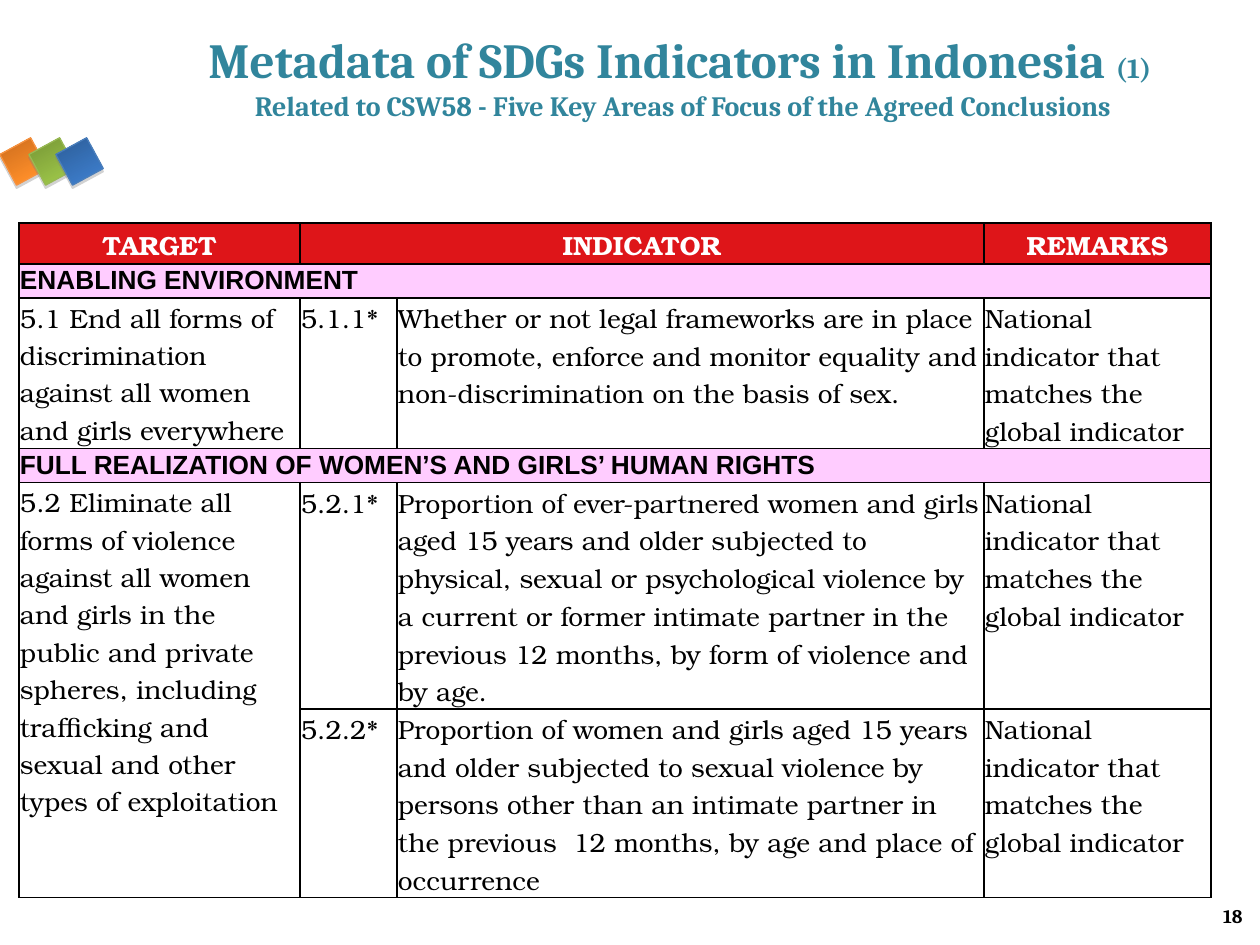
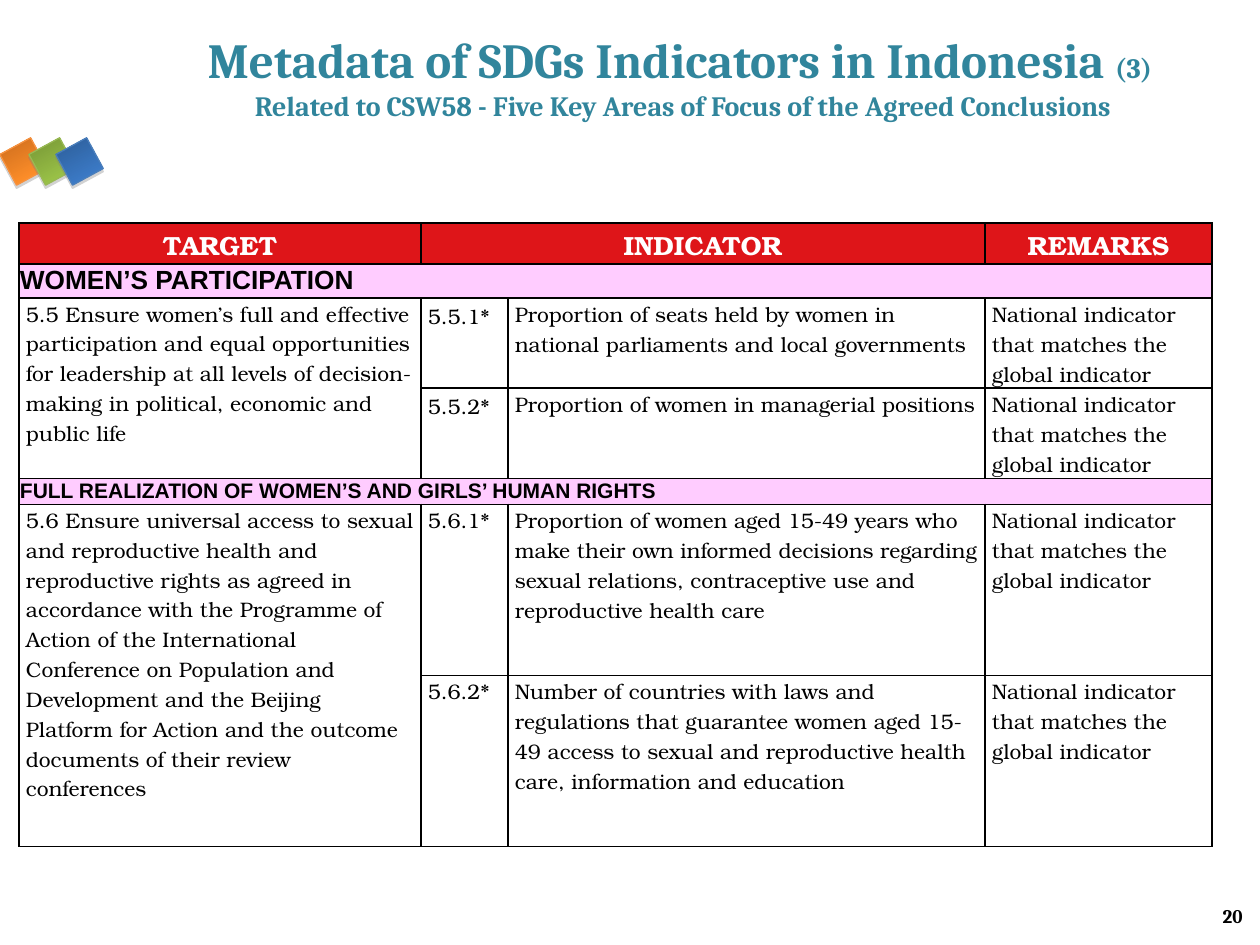
import lxml.etree
import pptx
import pptx.dml.color
import pptx.enum.shapes
import pptx.enum.text
import pptx.oxml
import pptx.oxml.ns
import pptx.util
from dataclasses import dataclass

PX = 914400 // 126
HEADING_FONT, SECTION_FONT, BODY_FONT = "Cambria", "Arial", "TeX Gyre Bonum"
TEAL, RED, PINK, BLACK, WHITE = "31859C", "DE1519", "FFCCFF", "000000", "FFFFFF"
SQUARES = [("FF8F2A", "CB6C1D", "F69240"), ("9BC348", "769535", "98B954"),
           ("3C7BC7", "2C5D98", "4A7EBB")]
REMARK = "National indicator that matches the global indicator"
RIGHTS = "FULL REALIZATION OF WOMEN’S AND GIRLS’ HUMAN RIGHTS"
HEADER_HEIGHT = 34
ALIGN = pptx.enum.text.PP_ALIGN
ANCHOR = pptx.enum.text.MSO_ANCHOR


@dataclass
class Section:
    """A pink band followed by one target and its (height, code, indicator) rows."""
    name: str
    target: str
    indicators: list
    band_height: int = 34
    band_size: int = 15
    code_spacing: float = 1.07


@dataclass
class IndicatorSlide:
    sequence: int
    number: int
    columns: list
    size: int
    inset: int
    sections: list


SLIDES = [
    IndicatorSlide(1, 18, [281, 97, 587, 227], 15, 1, [
        Section("ENABLING ENVIRONMENT",
                "5.1 End all forms of discrimination against all women and girls everywhere",
                [(134, "5.1.1*", "Whether or not legal frameworks are in place to promote, "
                  "enforce and monitor equality and non-discrimination on the basis of sex.")]),
        Section(RIGHTS,
                "5.2 Eliminate all forms of violence against all women and girls in the public "
                "and private spheres, including trafficking and sexual and other types of "
                "exploitation",
                [(171, "5.2.1*", "Proportion of ever-partnered women and girls aged 15 years and "
                  "older subjected to physical, sexual or psychological violence by a current or "
                  "former intimate partner in the previous 12 months, by form of violence and "
                  "by age."),
                 (169, "5.2.2*", "Proportion of women and girls aged 15 years and older subjected "
                  "to sexual violence by persons other than an intimate partner in the previous  "
                  "12 months, by age and place of occurrence")]),
    ]),
    IndicatorSlide(3, 20, [402, 87, 477, 227], 12, 7, [
        Section("WOMEN’S PARTICIPATION",
                "5.5 Ensure women’s full and effective participation and equal opportunities for "
                "leadership at all levels of decision-making in political, economic and public "
                "life",
                [(81, "5.5.1*", "Proportion of seats held by women in national parliaments and "
                  "local governments"),
                 (81, "5.5.2*", "Proportion of women in managerial positions")],
                code_spacing=1.15),
        Section(RIGHTS,
                "5.6 Ensure universal access to sexual and reproductive health and reproductive "
                "rights as agreed in accordance with the Programme of Action of the "
                "International Conference on Population and\n"
                "Development and the Beijing Platform for Action and the outcome documents of "
                "their review conferences",
                [(171, "5.6.1*", "Proportion of women aged 15-49 years who make their own "
                  "informed decisions regarding sexual relations, contraceptive use and "
                  "reproductive health care"),
                 (171, "5.6.2*", "Number of countries with laws and regulations that guarantee "
                  "women aged 15-49 access to sexual and reproductive health care, information "
                  "and education")],
                band_height=26, band_size=12),
    ]),
]


def px(*lengths):
    return [pptx.util.Emu(length * PX) for length in lengths]


def rgb(color):
    return pptx.dml.color.RGBColor.from_string(color)


def write(paragraph, text, size=15, font=BODY_FONT, color=BLACK, bold=False,
          align=ALIGN.LEFT, spacing=None):
    paragraph.alignment = align
    paragraph.line_spacing = spacing
    run = paragraph.add_run()
    run.text = text
    run.font.size = pptx.util.Pt(size)
    run.font.name = font
    run.font.bold = bold
    run.font.color.rgb = rgb(color)


def add_squares(slide, box):
    """Three tilted gradient squares in a row, starting at the box's left edge."""
    left, top, size = box
    for offset, (light, dark, outline) in zip((0, 29, 56), SQUARES):
        square = slide.shapes.add_shape(pptx.enum.shapes.MSO_SHAPE.RECTANGLE,
                                        *px(left + offset, top, size, size))
        square.rotation = 151.5
        square.fill.gradient()
        square.fill.gradient_angle = 270
        for stop, color, position in zip(square.fill.gradient_stops, (light, dark), (0.2, 1)):
            stop.color.rgb = rgb(color)
            stop.position = position
        square.line.color.rgb = rgb(outline)
        square.line.width = pptx.util.Pt(0.75)
        square.shadow.inherit = False
        effects = square._element.spPr.find(pptx.oxml.ns.qn("a:effectLst"))
        effects.append(pptx.oxml.parse_xml(
            f'<a:outerShdw {pptx.oxml.ns.nsdecls("a")} blurRad="0" dist="22860" dir="5400000" '
            'rotWithShape="0"><a:srgbClr val="808080"><a:alpha val="35000"/></a:srgbClr>'
            '</a:outerShdw>'))


def add_title(slide, box, sequence):
    title = slide.shapes.title
    title.left, title.top, title.width, title.height = px(*box)
    frame = title.text_frame
    frame.auto_size = pptx.enum.text.MSO_AUTO_SIZE.NONE
    frame.vertical_anchor = ANCHOR.MIDDLE
    style = dict(font=HEADING_FONT, color=TEAL, bold=True, align=ALIGN.CENTER)
    write(frame.paragraphs[0], "Metadata of SDGs Indicators in Indonesia ", size=28, **style)
    write(frame.paragraphs[0], f"({sequence}) ", size=16, **style)
    write(frame.add_paragraph(),
          "Related to CSW58 - Five Key Areas of Focus of the Agreed Conclusions",
          size=16, **style)


def add_slide_number(slide, box, number):
    frame = slide.shapes.add_textbox(*px(*box)).text_frame
    frame.word_wrap = True
    frame.vertical_anchor = ANCHOR.MIDDLE
    write(frame.paragraphs[0], str(number), size=11, font=HEADING_FONT, bold=True,
          align=ALIGN.RIGHT)


def draw_grid(cell):
    """Black one-point borders, no vertical margins and no fill."""
    properties = cell._tc.get_or_add_tcPr()
    for side in ("lnL", "lnR", "lnT", "lnB"):
        line = lxml.etree.SubElement(properties, pptx.oxml.ns.qn(f"a:{side}"), w="12700")
        fill = lxml.etree.SubElement(line, pptx.oxml.ns.qn("a:solidFill"))
        lxml.etree.SubElement(fill, pptx.oxml.ns.qn("a:srgbClr"), val=BLACK)
    cell.margin_top = cell.margin_bottom = 0
    cell.fill.background()


def fill_cell(cell, text, inset=1, fill=None, anchor=ANCHOR.TOP, spacing=1.07, **style):
    cell.margin_left, cell.margin_right = px(inset, inset)
    cell.vertical_anchor = anchor
    if fill:
        cell.fill.solid()
        cell.fill.fore_color.rgb = rgb(fill)
    frame = cell.text_frame
    for index, line in enumerate(text.split("\n")):
        paragraph = frame.add_paragraph() if index else frame.paragraphs[0]
        write(paragraph, line, spacing=spacing, **style)


def add_indicator_table(slide, corner, content):
    heights = [HEADER_HEIGHT]
    for section in content.sections:
        heights += [section.band_height] + [height for height, *_ in section.indicators]
    shape = slide.shapes.add_table(len(heights), len(content.columns),
                                   *px(*corner, sum(content.columns), sum(heights)))
    table = shape.table
    table.first_row = table.horz_banding = False
    for column, width in zip(table.columns, px(*content.columns)):
        column.width = width
    for row, height in zip(table.rows, px(*heights)):
        row.height = height
    for cell in table.iter_cells():
        draw_grid(cell)

    table.cell(0, 1).merge(table.cell(0, 2))
    for column, heading in ((0, "TARGET"), (1, "INDICATOR"), (3, "REMARKS")):
        fill_cell(table.cell(0, column), heading, fill=RED, anchor=ANCHOR.MIDDLE,
                  color=WHITE, bold=True, align=ALIGN.CENTER)

    body = dict(size=content.size, inset=content.inset)
    row = 1
    for section in content.sections:
        table.cell(row, 0).merge(table.cell(row, 3))
        fill_cell(table.cell(row, 0), section.name, fill=PINK, spacing=1.06,
                  size=section.band_size, font=SECTION_FONT, bold=True)
        row += 1
        last = row + len(section.indicators) - 1
        if last > row:
            table.cell(row, 0).merge(table.cell(last, 0))
        fill_cell(table.cell(row, 0), section.target, spacing=1.06, **body)
        for _, code, indicator in section.indicators:
            fill_cell(table.cell(row, 1), code, spacing=section.code_spacing, **body)
            fill_cell(table.cell(row, 2), indicator, **body)
            fill_cell(table.cell(row, 3), REMARK, **body)
            row += 1


def add_indicator_slide(presentation, content):
    slide = presentation.slides.add_slide(presentation.slide_layouts.get_by_name("Title Only"))
    add_squares(slide, (6, 144, 35))
    add_title(slide, (126, 42, 1114, 67), content.sequence)
    add_indicator_table(slide, (19, 223), content)
    add_slide_number(slide, (961, 891, 294, 50), content.number)


def main():
    presentation = pptx.Presentation()
    presentation.slide_width, presentation.slide_height = px(1260, 945)
    for content in SLIDES:
        add_indicator_slide(presentation, content)
    presentation.save("out.pptx")


if __name__ == "__main__":
    main()
